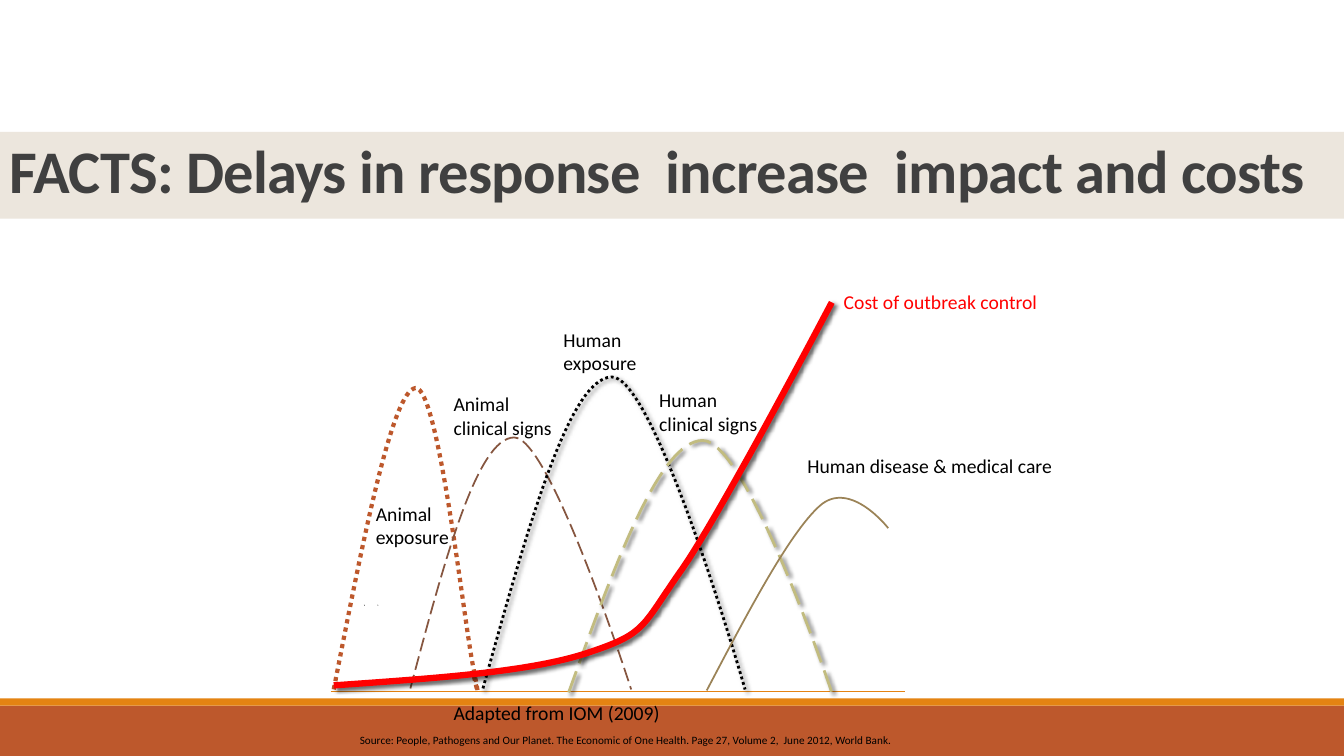
from lxml import etree
from pptx import Presentation
from pptx import util as u
from pptx.dml.color import RGBColor
from pptx.enum import dml, shapes, text
from pptx.oxml.ns import qn

PX = u.Inches(1) // 100
COLORS = {
    "rust": "BD582C", "orange": "E48312", "sand": "ECE6DD", "title": "404040",
    "black": "000000", "brown": "865640", "olive": "C2BC80", "tan": "9B8357",
    "red": "FF0000",
}
DOT, DASH = dml.MSO_LINE.ROUND_DOT, dml.MSO_LINE.LONG_DASH
LEFT, JUSTIFY = text.PP_ALIGN.LEFT, text.PP_ALIGN.JUSTIFY


def color(name):
    return RGBColor.from_string(COLORS[name])


def add_text(box, words, size, name, align=LEFT):
    textbox = slide.shapes.add_textbox(*[n * PX for n in box])
    frame = textbox.text_frame
    frame.word_wrap = True
    frame.text = words
    paragraph = frame.paragraphs[0]
    paragraph.alignment = align
    paragraph.font.name = "Calibri"
    paragraph.font.size = u.Pt(size)
    paragraph.font.color.rgb = color(name)
    return frame


presentation = Presentation()
presentation.slide_width = 1333 * PX
presentation.slide_height = 750 * PX
slide = presentation.slides.add_slide(presentation.slide_layouts[6])

for top, height, name in [(700, 50, "rust"), (693, 7, "orange"), (131, 86, "sand")]:
    band = slide.shapes.add_shape(
        shapes.MSO_SHAPE.RECTANGLE, 0, top * PX, 1333 * PX, height * PX)
    band.shadow.inherit = False
    band.fill.solid()
    band.fill.fore_color.rgb = color(name)
    band.line.fill.background()

title = add_text((0, 134, 1320, 80), "FACTS: Delays in response  increase  impact and costs",
                 43.2, "title")
title.vertical_anchor = text.MSO_ANCHOR.MIDDLE
title.paragraphs[0].font.bold = True
title.paragraphs[0].line_spacing = 0.85
title.paragraphs[0].runs[0].font._element.set("spc", "-50")

for left in (361, 374):
    builder = slide.shapes.build_freeform(left, 600, scale=PX)
    builder.add_line_segments([(left + 1, 600), (left + 1, 601)])
    speck = builder.convert_to_shape()
    speck.shadow.inherit = False
    speck.fill.solid()
    speck.fill.fore_color.rgb = color("black")
    speck.line.fill.background()

baseline = slide.shapes.add_connector(
    shapes.MSO_CONNECTOR.STRAIGHT, 328 * PX, 686 * PX, 898 * PX, 686 * PX)
baseline.line.color.rgb = color("orange")
baseline.line.width = u.Pt(1)
etree.SubElement(baseline._element.spPr, qn("a:effectLst"))

curves = [
    ("rust", 3, DOT, False, [(331, 684), (360, 536), (389, 388), (412, 385),
                             (435, 382), (460, 618), (470, 665),
                             (479, 712), (469, 666), (469, 666)]),
    ("brown", 1.25, DASH, False, [(407, 683), (440, 559), (473, 434), (510, 434),
                                  (546, 434), (626, 684), (626, 684)]),
    ("black", 2, DOT, True, [(479, 683), (522, 529), (564, 374), (607, 374),
                             (651, 375), (739, 684), (739, 684)]),
    ("olive", 2, DASH, True, [(564, 687), (609, 562), (654, 437), (697, 437),
                              (741, 437), (825, 687), (825, 687)]),
    ("tan", 1.25, None, False, [(701, 685), (742, 607), (783, 529), (813, 502),
                                (843, 475), (881, 524), (881, 524)]),
    ("red", 4.5, None, True, [(331, 680), (429, 673), (527, 667), (585, 647),
                              (642, 628), (636, 622), (677, 564),
                              (717, 506), (825, 300), (825, 300)]),
]
for name, width, dash, has_shadow, points in curves:
    builder = slide.shapes.build_freeform(*points[0], scale=PX)
    builder.add_line_segments(points[1:], close=False)
    curve = builder.convert_to_shape()
    outline = next(curve._element.iter(qn("a:path")))
    segments = outline.findall(qn("a:lnTo"))
    for start in range(0, len(segments), 3):
        bezier = etree.SubElement(outline, qn("a:cubicBezTo"))
        for segment in segments[start:start + 3]:
            bezier.append(segment[0])
            outline.remove(segment)
    curve.fill.background()
    curve.line.color.rgb = color(name)
    curve.line.width = u.Pt(width)
    if dash:
        curve.line.dash_style = dash
    curve.shadow.inherit = False
    if has_shadow:
        effects = curve._element.spPr.find(qn("a:effectLst"))
        shadow = etree.SubElement(effects, qn("a:outerShdw"), blurRad=str(u.Pt(3)),
                                  dist=str(u.Pt(2)), dir="2700000", rotWithShape="0")
        shade = etree.SubElement(shadow, qn("a:srgbClr"), val=COLORS["black"])
        etree.SubElement(shade, qn("a:alpha"), val="60000")

labels = [
    ((363, 493, 125, 57), "Animal\vexposure", 14, "black", LEFT),
    ((440, 384, 131, 57), "Animal\vclinical signs", 14, "black", LEFT),
    ((549, 320, 125, 57), "Human\vexposure", 14, "black", JUSTIFY),
    ((644, 380, 133, 57), "Human\vclinical signs", 14, "black", JUSTIFY),
    ((791, 445, 272, 34), "Human disease & medical care", 14, "black", JUSTIFY),
    ((827, 283, 213, 34), "Cost of outbreak control", 14, "red", LEFT),
    ((440, 690, 350, 34), "Adapted from IOM (2009)", 14, "black", LEFT),
    ((347, 723, 551, 24), "Source: People, Pathogens and Our Planet. The Economic of One Health. "
     "Page 27, Volume 2,  June 2012, World Bank.", 8, "black", LEFT),
]
for label in labels:
    add_text(*label)

presentation.save("out.pptx")
